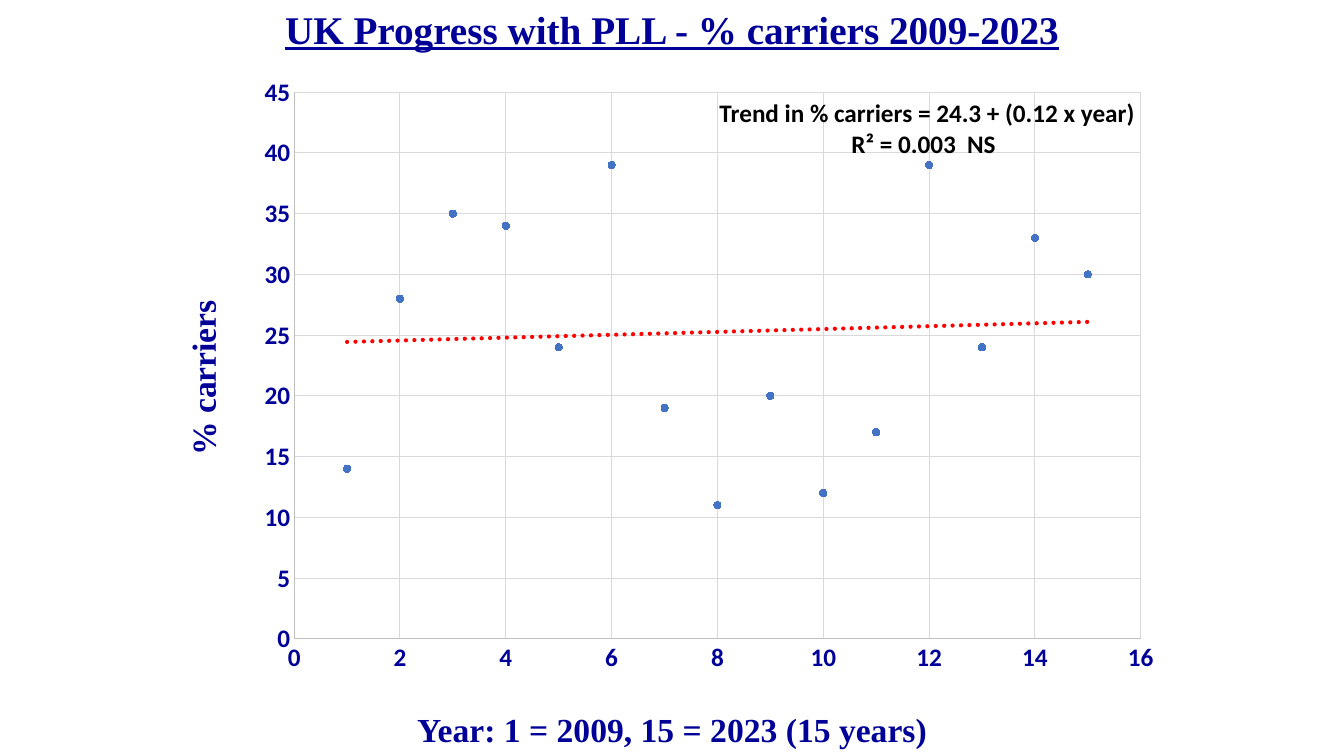
from lxml import etree
from pptx import Presentation
from pptx.chart.data import XyChartData
from pptx.dml.color import RGBColor
from pptx.enum.chart import XL_CHART_TYPE as ChartType, XL_MARKER_STYLE as Marker
from pptx.enum.chart import XL_TICK_MARK as Tick
from pptx.enum.text import MSO_AUTO_SIZE as AutoSize, PP_ALIGN as Align
from pptx.oxml import parse_xml
from pptx.util import Pt

NAVY = RGBColor(0x00, 0x00, 0x99)
BLACK = RGBColor(0x00, 0x00, 0x00)
BLUE = RGBColor(0x44, 0x72, 0xC4)
RED = RGBColor(0xFF, 0x00, 0x00)
AXIS_GREY = RGBColor(0xBF, 0xBF, 0xBF)
GRID_GREY = RGBColor(0xD9, 0xD9, 0xD9)
SERIF, SANS = "Times New Roman", "Calibri"

CARRIERS = [14, 28, 35, 34, 24, 39, 19, 11, 20, 12, 17, 39, 24, 33, 30]
CHART_BOX = (173.5, 54.7, 666, 447.8)
PLOT = {"x": 0.055, "y": 0.025, "w": 0.908, "h": 0.872}
YEAR_AXIS, CARRIER_AXIS = (16, 2), (45, 5)

LABELS = [
    ((120, 0, 720, 41), 0, SERIF, 28, NAVY, True,
     [("UK Progress with PLL - % carriers 2009-2023", Align.CENTER)]),
    ((120, 502.5, 720, 36), 0, SERIF, 24, NAVY, False,
     [("Year: 1 = 2009, 15 = 2023 (15 years)", Align.CENTER)]),
    ((-45.4, 252, 380, 36), 270, SERIF, 24, NAVY, False,
     [("% carriers", Align.CENTER)]),
    ((501.8, 66.2, 316, 51), 0, SANS, 18, BLACK, False,
     [("Trend in % carriers = 24.3 + (0.12 x year)", Align.RIGHT),
      ("R² = 0.003  NS", Align.CENTER)]),
]

CHART_NS = "http://schemas.openxmlformats.org/drawingml/2006/chart"
DRAW_NS = "http://schemas.openxmlformats.org/drawingml/2006/main"
TREND = f"""<c:trendline xmlns:c="{CHART_NS}" xmlns:a="{DRAW_NS}">
<c:spPr><a:ln w="{Pt(3)}" cap="rnd"><a:solidFill><a:srgbClr val="{RED}"/></a:solidFill>
<a:prstDash val="sysDot"/></a:ln></c:spPr>
<c:trendlineType val="linear"/><c:dispRSqr val="0"/><c:dispEq val="0"/></c:trendline>"""


def style_line(line, color):
    line.color.rgb = color
    line.width = Pt(0.75)


def style_axis(axis, maximum, step):
    axis.minimum_scale, axis.maximum_scale, axis.major_unit = 0, maximum, step
    axis.major_tick_mark = axis.minor_tick_mark = Tick.NONE
    axis.has_major_gridlines = True
    style_line(axis.format.line, AXIS_GREY)
    style_line(axis.major_gridlines.format.line, GRID_GREY)
    font = axis.tick_labels.font
    font.name, font.size, font.bold = SANS, Pt(18), True
    font.color.rgb = NAVY
    axis.tick_labels.number_format = "General"
    axis.tick_labels.number_format_is_linked = False


def place_plot(chart):
    plot_area = chart.plots[0]._element.getparent()
    for old in plot_area.findall(f"{{{CHART_NS}}}layout"):
        plot_area.remove(old)
    layout = etree.Element(f"{{{CHART_NS}}}layout")
    manual = etree.SubElement(layout, f"{{{CHART_NS}}}manualLayout")
    settings = {"layoutTarget": "inner", "xMode": "edge", "yMode": "edge", **PLOT}
    for tag, value in settings.items():
        etree.SubElement(manual, f"{{{CHART_NS}}}{tag}").set("val", str(value))
    plot_area.insert(0, layout)


def add_carrier_chart(slide):
    data = XyChartData()
    points = data.add_series("Series 1")
    for year, percent in enumerate(CARRIERS, 1):
        points.add_data_point(year, percent)
    chart = slide.shapes.add_chart(ChartType.XY_SCATTER, *map(Pt, CHART_BOX), data).chart
    chart.has_legend = chart.has_title = False
    chart.font.name, chart.font.size = SANS, Pt(10)
    chart.font.color.rgb = BLACK
    style_axis(chart.category_axis, *YEAR_AXIS)
    style_axis(chart.value_axis, *CARRIER_AXIS)
    chart.plots[0].vary_by_categories = False
    carriers = chart.plots[0].series[0]
    carriers.smooth = False if hasattr(carriers, "smooth") else None
    carriers.format.line.fill.background()
    dots = carriers.marker
    dots.style, dots.size = Marker.CIRCLE, 5
    dots.format.fill.solid()
    dots.format.fill.fore_color.rgb = BLUE
    dots.format.line.color.rgb = BLUE
    carriers._element.find(f"{{{CHART_NS}}}xVal").addprevious(parse_xml(TREND))
    place_plot(chart)


def add_label(slide, box, rotation, face, size, color, underlined, lines):
    label = slide.shapes.add_textbox(*map(Pt, box))
    label.rotation = rotation
    frame = label.text_frame
    frame.word_wrap = True
    frame.auto_size = AutoSize.SHAPE_TO_FIT_TEXT
    for row, (words, align) in enumerate(lines):
        paragraph = frame.add_paragraph() if row else frame.paragraphs[0]
        paragraph.alignment = align
        run = paragraph.add_run()
        run.text = words
        font = run.font
        font.name, font.size, font.bold = face, Pt(size), True
        font.color.rgb = color
        if underlined:
            font.underline = True


def main():
    deck = Presentation()
    deck.slide_width, deck.slide_height = Pt(960), Pt(540)
    slide = deck.slides.add_slide(deck.slide_layouts[6])
    add_carrier_chart(slide)
    for label in LABELS:
        add_label(slide, *label)
    deck.save("out.pptx")


if __name__ == "__main__":
    main()
